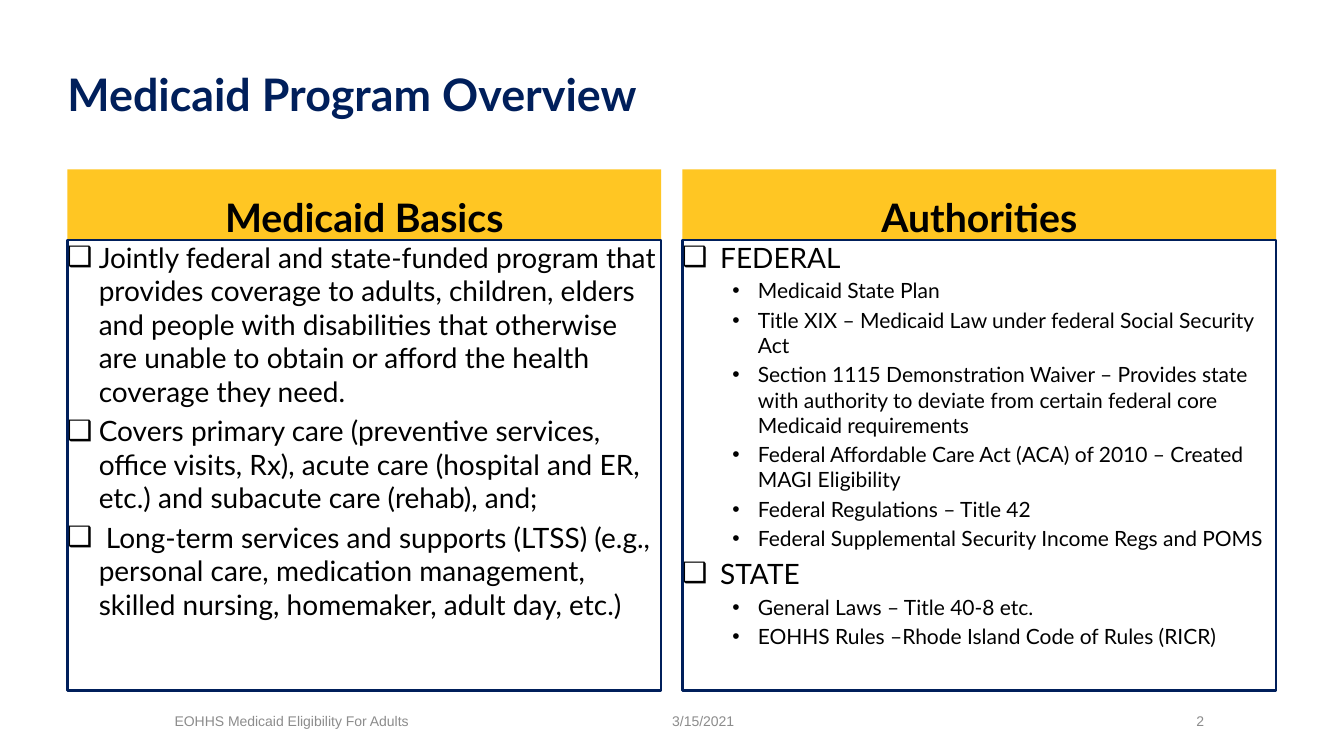
from lxml.etree import SubElement
from pptx import Presentation
from pptx.dml.color import RGBColor
from pptx.enum.shapes import MSO_SHAPE
from pptx.enum.text import MSO_ANCHOR, PP_ALIGN
from pptx.oxml.ns import qn
from pptx.util import Cm, Pt

COLORS = {"navy": "001F5B", "gold": "FFC623", "white": "FFFFFF",
          "black": "000000", "gray": "8C8C8C"}
TITLE = "Medicaid Program Overview"
COLUMNS = [
    {
        "heading": "Medicaid Basics",
        "indent": 0.79,
        "items": [
            ("Jointly federal and state-funded program that provides coverage to adults, "
             "children, elders and people with disabilities that otherwise are unable to "
             "obtain or afford the health coverage they need.", []),
            ("Covers primary care (preventive services, office visits, Rx), acute care "
             "(hospital and ER, etc.) and subacute care (rehab), and;", []),
            (" Long-term services and supports (LTSS) (e.g., personal care, medication "
             "management, skilled nursing, homemaker, adult day, etc.)", []),
        ],
    },
    {
        "heading": "Authorities",
        "indent": 0.95,
        "items": [
            ("FEDERAL", [
                "Medicaid State Plan",
                "Title XIX – Medicaid Law under federal Social Security Act",
                "Section 1115 Demonstration Waiver – Provides state with authority to "
                "deviate from certain federal core Medicaid requirements",
                "Federal Affordable Care Act (ACA) of 2010 – Created MAGI Eligibility",
                "Federal Regulations – Title 42",
                "Federal Supplemental Security Income Regs and POMS",
            ]),
            ("STATE", [
                "General Laws – Title 40-8 etc.",
                "EOHHS Rules –Rhode Island Code of Rules (RICR)",
            ]),
        ],
    },
]
FOOTERS = [("EOHHS Medicaid Eligibility For Adults", 4.4, 10.72),
           ("3/15/2021", 16.94, 7.9),
           ("2", 30.15, 2.03)]

MARGIN = 1.7
COLUMN_WIDTH, COLUMN_GAP = 14.96, 0.54
HEADING_TOP, HEADING_HEIGHT, BODY_HEIGHT = 4.27, 1.78, 11.35
FOOTER_TOP, FOOTER_HEIGHT = 17.65, 1.02


def color(name):
    return RGBColor.from_string(COLORS[name])


def prepare_frame(shape, anchor):
    frame = shape.text_frame
    frame.word_wrap = True
    frame.vertical_anchor = anchor
    frame.margin_left = frame.margin_top = frame.margin_right = frame.margin_bottom = 0
    return frame


def set_font(paragraph, size, name="Lato", tint="black", bold=False):
    font = paragraph.font
    font.size, font.name, font.bold = Pt(size), name, bold
    font.color.rgb = color(tint)


def add_label(slide, text, left, top, width, height, **font):
    box = slide.shapes.add_textbox(Cm(left), Cm(top), Cm(width), Cm(height))
    paragraph = prepare_frame(box, MSO_ANCHOR.MIDDLE).paragraphs[0]
    paragraph.text = text
    set_font(paragraph, **font)


def add_panel(slide, left, top, height, fill, anchor, line=None):
    shape = slide.shapes.add_shape(MSO_SHAPE.RECTANGLE, Cm(left), Cm(top),
                                   Cm(COLUMN_WIDTH), Cm(height))
    shape.shadow.inherit = False
    shape.fill.solid()
    shape.fill.fore_color.rgb = color(fill)
    if line:
        shape.line.color.rgb = color(line)
        shape.line.width = Pt(2)
    else:
        shape.line.fill.background()
    return prepare_frame(shape, anchor)


def add_bullet(frame, text, symbol, size, indent, hanging, level=0):
    is_first = not frame.text
    paragraph = frame.paragraphs[0] if is_first else frame.add_paragraph()
    paragraph.text = text
    paragraph.level = level
    paragraph.alignment = PP_ALIGN.LEFT
    if not is_first:
        paragraph.space_before = Pt(size * 0.2)
    properties = paragraph._p.get_or_add_pPr()
    properties.set("marL", str(Cm(indent)))
    properties.set("indent", str(-Cm(hanging)))
    SubElement(properties, qn("a:buFont"), typeface="Arial")
    SubElement(properties, qn("a:buChar"), char=symbol)
    set_font(paragraph, size)


def add_column(slide, column, left):
    heading = add_panel(slide, left, HEADING_TOP, HEADING_HEIGHT, "gold", MSO_ANCHOR.BOTTOM)
    paragraph = heading.paragraphs[0]
    paragraph.text = column["heading"]
    paragraph.alignment = PP_ALIGN.CENTER
    set_font(paragraph, 28, bold=True)

    body = add_panel(slide, left, HEADING_TOP + HEADING_HEIGHT, BODY_HEIGHT,
                     "white", MSO_ANCHOR.TOP, line="navy")
    for text, details in column["items"]:
        add_bullet(body, text, "❑", 20, column["indent"], column["indent"])
        for detail in details:
            add_bullet(body, detail, "•", 15, 1.9, 0.64, level=1)


def main():
    presentation = Presentation()
    presentation.slide_width, presentation.slide_height = Cm(33.87), Cm(19.05)
    slide = presentation.slides.add_slide(presentation.slide_layouts[6])
    add_label(slide, TITLE, MARGIN, 0.76, 30.48, 3.18, size=32, tint="navy", bold=True)
    for index, column in enumerate(COLUMNS):
        add_column(slide, column, MARGIN + index * (COLUMN_WIDTH + COLUMN_GAP))
    for text, left, width in FOOTERS:
        add_label(slide, text, left, FOOTER_TOP, width, FOOTER_HEIGHT,
                  size=10, name="Arial", tint="gray")
    presentation.save("out.pptx")


if __name__ == "__main__":
    main()
